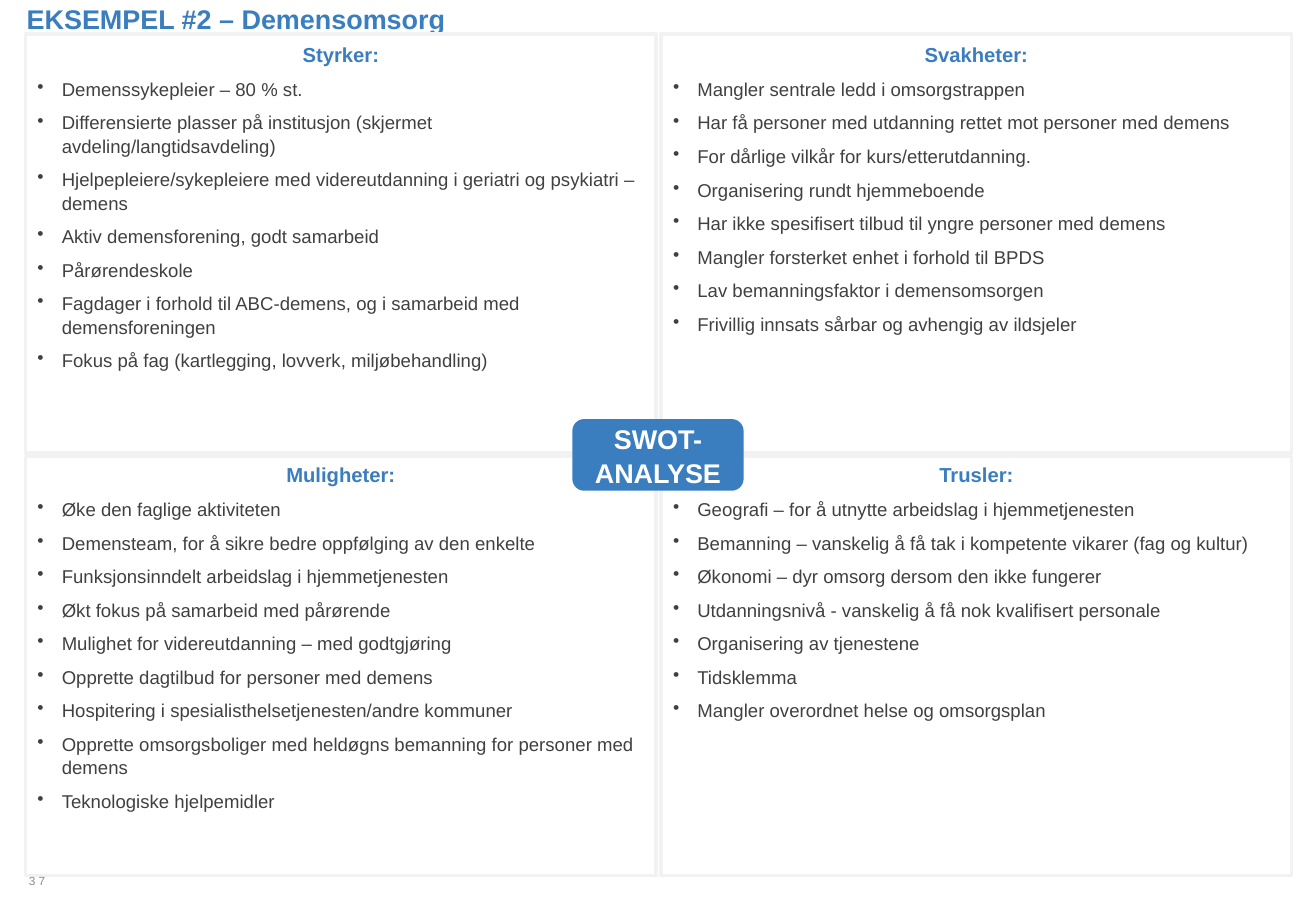
from lxml.etree import SubElement
from pptx import Presentation
from pptx.dml.color import RGBColor
from pptx.enum.shapes import MSO_SHAPE as Shape
from pptx.enum.text import MSO_ANCHOR as Anchor, MSO_AUTO_SIZE as Fit, PP_ALIGN as Align
from pptx.oxml.ns import qn
from pptx.util import Pt

SCALE = 9144
BLUE = RGBColor(0x3A, 0x7E, 0xC0)
DARK = RGBColor(0x40, 0x40, 0x40)
GRAY = RGBColor(0x8C, 0x8C, 0x8C)
PALE = RGBColor(0xF2, 0xF2, 0xF2)
WHITE = RGBColor(0xFF, 0xFF, 0xFF)

TITLE = {"size": Pt(16), "bold": True, "color": BLUE}
HEAD = {"size": Pt(12), "bold": True, "color": BLUE}
ITEM = {"size": Pt(11), "bold": False, "color": DARK}
BADGE = {"size": Pt(16), "bold": True, "color": WHITE}
PAGE = {"size": Pt(7), "bold": False, "color": GRAY}

COLS = (21, 544)
ROWS = (28, 376)
WIDE, HIGH = 519, 345
INDENT = 20

SWOT = [
    ("Styrker:", 29, 283, [
        "Demenssykepleier – 80 % st.",
        "Differensierte plasser på institusjon (skjermet avdeling/langtidsavdeling)",
        "Hjelpepleiere/sykepleiere med videreutdanning i geriatri og psykiatri – demens",
        "Aktiv demensforening, godt samarbeid",
        "Pårørendeskole",
        "Fagdager i forhold til ABC-demens, og i samarbeid med demensforeningen",
        "Fokus på fag (kartlegging, lovverk, miljøbehandling)",
    ]),
    ("Svakheter:", 29, 246, [
        "Mangler sentrale ledd i omsorgstrappen",
        "Har få personer med utdanning rettet mot personer med demens",
        "For dårlige vilkår for kurs/etterutdanning.",
        "Organisering rundt hjemmeboende",
        "Har ikke spesifisert tilbud til yngre personer med demens",
        "Mangler forsterket enhet i forhold til BPDS",
        "Lav bemanningsfaktor i demensomsorgen",
        "Frivillig innsats sårbar og avhengig av ildsjeler",
    ]),
    ("Muligheter:", 375, 300, [
        "Øke den faglige aktiviteten",
        "Demensteam, for å sikre bedre oppfølging av den enkelte",
        "Funksjonsinndelt arbeidslag i hjemmetjenesten",
        "Økt fokus på samarbeid med pårørende",
        "Mulighet for videreutdanning – med godtgjøring",
        "Opprette dagtilbud for personer med demens",
        "Hospitering i spesialisthelsetjenesten/andre kommuner",
        "Opprette omsorgsboliger med heldøgns bemanning for personer med demens",
        "Teknologiske hjelpemidler",
    ]),
    ("Trusler:", 375, 219, [
        "Geografi – for å utnytte arbeidslag i hjemmetjenesten",
        "Bemanning – vanskelig å få tak i kompetente vikarer (fag og kultur)",
        "Økonomi – dyr omsorg dersom den ikke fungerer",
        "Utdanningsnivå - vanskelig å få nok kvalifisert personale",
        "Organisering av tjenestene",
        "Tidsklemma",
        "Mangler overordnet helse og omsorgsplan",
    ]),
]


def px(*vals):
    """Turn px lengths into EMU."""
    return [val * SCALE for val in vals]


def apply(obj, look):
    """Set each attribute in a dict of format values."""
    for name, val in look.items():
        setattr(obj, name, val)


def write(par, text, look, align=Align.LEFT):
    """Put one formatted run in a paragraph."""
    apply(par, {"alignment": align, "line_spacing": 1.05})
    run = par.add_run()
    run.text = text
    apply(run.font, {"name": "Arial", "size": look["size"], "bold": look["bold"]})
    run.font.color.rgb = look["color"]
    return run


def add_item(frame, text):
    """Add a bulleted paragraph."""
    par = frame.add_paragraph()
    props = par._p.get_or_add_pPr()
    left, = px(INDENT)
    props.set("marL", str(left))
    props.set("indent", str(-left))
    SubElement(props, qn("a:buChar")).set("char", "•")
    par.space_before = Pt(6)
    write(par, text, ITEM)


def add_block(slide, shape, box, fill):
    """Add a filled shape without shadow."""
    block = slide.shapes.add_shape(shape, *px(*box))
    block.shadow.inherit = False
    block.fill.solid()
    block.fill.fore_color.rgb = fill
    return block


def add_panel(slide, left, top):
    """Add one framed quadrant."""
    line = add_block(slide, Shape.RECTANGLE, (left, top, WIDE, HIGH), WHITE).line
    line.color.rgb = PALE
    line.width = Pt(2)


def add_badge(slide):
    """Add the centre label."""
    badge = add_block(slide, Shape.ROUNDED_RECTANGLE, (471, 345, 141, 59), BLUE)
    badge.line.fill.background()
    frame = badge.text_frame
    apply(frame, {"word_wrap": False, "vertical_anchor": Anchor.MIDDLE,
                  "margin_left": 0, "margin_right": 0})
    write(frame.paragraphs[0], "SWOT-", BADGE, Align.CENTER)
    write(frame.add_paragraph(), "ANALYSE", BADGE, Align.CENTER)


def add_text(slide, box):
    """Add a wrapping text box and return its frame."""
    frame = slide.shapes.add_textbox(*px(*box)).text_frame
    frame.word_wrap = True
    return frame


def add_list(slide, left, head, top, high, items):
    """Add a heading with its bullets."""
    frame = add_text(slide, (left, top, WIDE, high))
    frame.auto_size = Fit.SHAPE_TO_FIT_TEXT
    write(frame.paragraphs[0], head, HEAD, Align.CENTER)
    for item in items:
        add_item(frame, item)


def set_title(slide, text):
    """Place and format the title."""
    title = slide.shapes.title
    apply(title, dict(zip(("left", "top", "width", "height"), px(12, -4, 970, 37))))
    frame = title.text_frame
    apply(frame, {"word_wrap": True, "vertical_anchor": Anchor.TOP,
                  "auto_size": Fit.NONE})
    write(frame.paragraphs[0], text, TITLE)


def add_page(slide, text):
    """Add the page number."""
    frame = add_text(slide, (14, 714, 269, 17))
    run = write(frame.paragraphs[0], text, PAGE)
    run._r.get_or_add_rPr().set("spc", "190")


def main():
    """Build and save the slide."""
    deck = Presentation()
    deck.slide_width, deck.slide_height = px(1083, 750)
    slide = deck.slides.add_slide(deck.slide_layouts[5])
    for top in ROWS:
        for left in COLS:
            add_panel(slide, left, top)
    add_badge(slide)
    for num, part in enumerate(SWOT):
        add_list(slide, COLS[num % 2], *part)
    set_title(slide, "EKSEMPEL #2 – Demensomsorg")
    add_page(slide, "37")
    deck.save("out.pptx")


if __name__ == "__main__":
    main()
